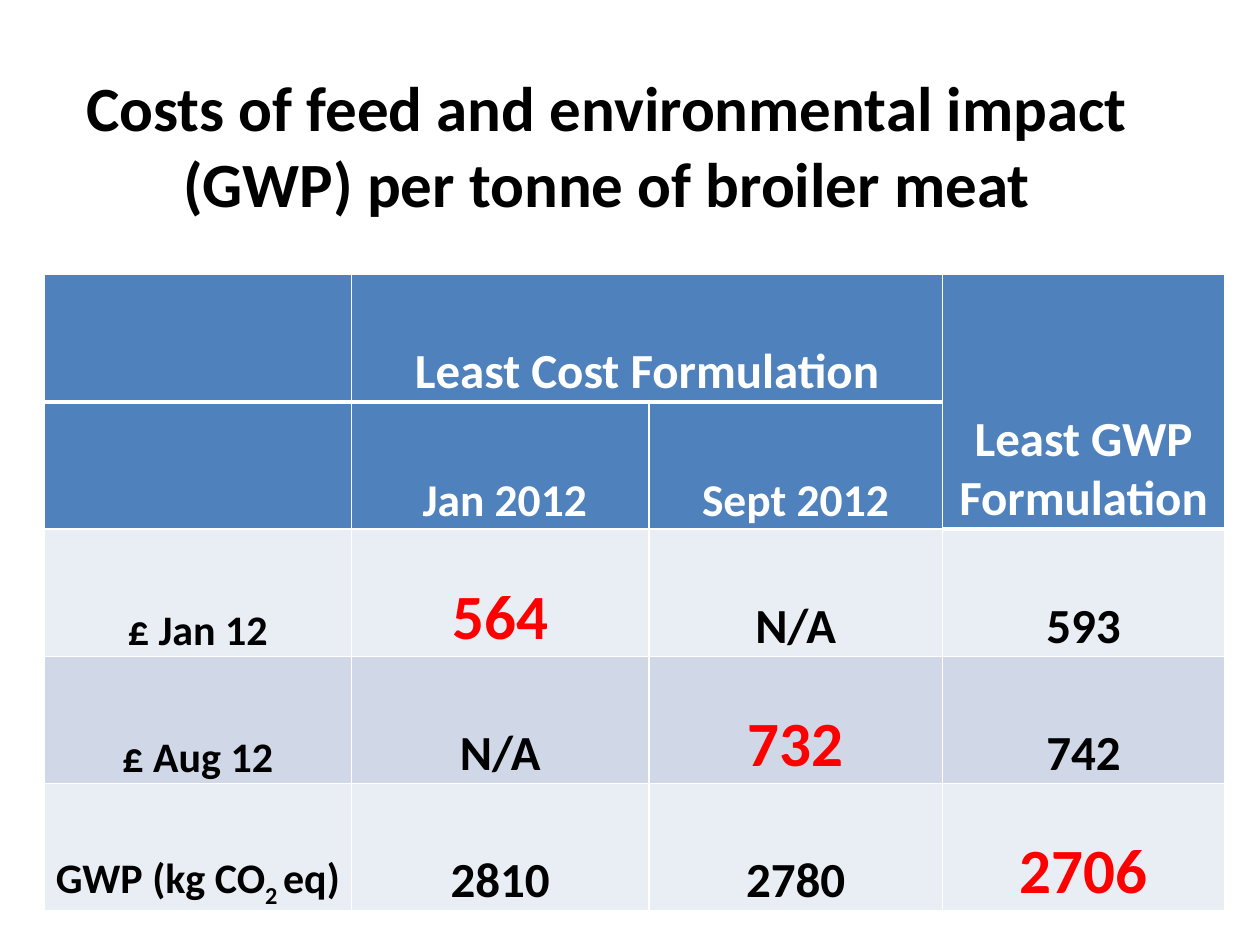
import pptx
import pptx.dml.color
import pptx.enum.text
import pptx.oxml
import pptx.oxml.ns
import pptx.util

Inches = pptx.util.Inches
Pt = pptx.util.Pt
ANCHOR = pptx.enum.text.MSO_ANCHOR

COLORS = {
    "text": "000000",
    "white": "FFFFFF",
    "accent": "FF0000",
    "header": "4F81BD",
    "light": "E9EDF4",
    "band": "D0D8E8",
}
COLUMN_WIDTHS = [2.44, 2.36, 2.33, 2.24]
ROW_HEIGHT = 1.01
ROW_FILLS = ["header", "header", "light", "band", "light"]
MERGES = [((0, 1), (0, 2)), ((0, 3), (1, 3))]
THICK_BOTTOMS = {(0, 0), (0, 1), (0, 2), (0, 3), (1, 3)}

HEAD = {"size": 28, "color": "white"}
SUBHEAD = {"size": 26, "color": "white"}
LABEL = {"size": 24, "color": "text"}
VALUE = {"size": 28, "color": "text"}
BEST = {"size": 36, "color": "accent"}

CELLS = {
    (0, 1): [("Least Cost Formulation", HEAD)],
    (0, 3): [("Least GWP Formulation", HEAD)],
    (1, 1): [(" ", {"size": 24, "color": "white"}), ("Jan 2012", SUBHEAD)],
    (1, 2): [("Sept 2012", SUBHEAD)],
    (2, 0): [("£ Jan 12", LABEL)],
    (2, 1): [("564", BEST)],
    (2, 2): [("N/A", VALUE)],
    (2, 3): [("593", VALUE)],
    (3, 0): [("£ Aug 12", LABEL)],
    (3, 1): [("N/A", VALUE)],
    (3, 2): [("732", BEST)],
    (3, 3): [("742", VALUE)],
    (4, 0): [("GWP (kg CO", LABEL), ("2 ", {**LABEL, "baseline": -25000}), ("eq)", LABEL)],
    (4, 1): [("2810", VALUE)],
    (4, 2): [("2780", VALUE)],
    (4, 3): [("2706", BEST)],
}


class SlideBuilder:
    def __init__(self, prs, font):
        self.s = prs.slides.add_slide(prs.slide_layouts[6])
        self.font = font

    def rgb(self, name):
        return pptx.dml.color.RGBColor.from_string(COLORS[name])

    def add_runs(self, tf, runs):
        p = tf.paragraphs[0]
        p.alignment = pptx.enum.text.PP_ALIGN.CENTER
        for text, style in runs:
            r = p.add_run()
            r.text = text
            values = {"name": self.font, "size": Pt(style["size"]), "bold": True}
            for key, value in values.items():
                setattr(r.font, key, value)
            r.font.color.rgb = self.rgb(style["color"])
            if "baseline" in style:
                r._r.get_or_add_rPr().set("baseline", str(style["baseline"]))

    def title(self, text, box):
        sp = self.s.shapes.add_textbox(*map(Inches, box))
        tf = sp.text_frame
        for key, value in {"word_wrap": True, "vertical_anchor": ANCHOR.MIDDLE}.items():
            setattr(tf, key, value)
        self.add_runs(tf, [(text, {"size": 36, "color": "text"})])

    def border(self, cell, edge, points):
        cell._tc.get_or_add_tcPr().append(pptx.oxml.parse_xml(
            f'<a:{edge} {pptx.oxml.ns.nsdecls("a")} w="{Pt(points)}">'
            f'<a:solidFill><a:srgbClr val="{COLORS["white"]}"/></a:solidFill></a:{edge}>'
        ))

    def table(self, left, top):
        rows, cols = len(ROW_FILLS), len(COLUMN_WIDTHS)
        frame = self.s.shapes.add_table(
            rows, cols, Inches(left), Inches(top),
            Inches(sum(COLUMN_WIDTHS)), Inches(ROW_HEIGHT * rows),
        )
        table = frame.table
        for column, width in zip(table.columns, COLUMN_WIDTHS):
            column.width = Inches(width)
        for row in table.rows:
            row.height = Inches(ROW_HEIGHT)
        for first, last in MERGES:
            table.cell(*first).merge(table.cell(*last))
        for row, fill in enumerate(ROW_FILLS):
            for col in range(cols):
                self.cell(table, row, col, fill)

    def cell(self, table, row, col, fill):
        cell = table.cell(row, col)
        values = {"vertical_anchor": ANCHOR.BOTTOM}
        for side in ("left", "right", "top", "bottom"):
            values[f"margin_{side}"] = 0
        for key, value in values.items():
            setattr(cell, key, value)
        top = 3 if (row - 1, col) in THICK_BOTTOMS else 1
        bottom = 3 if (row, col) in THICK_BOTTOMS else 1
        for edge, points in {"lnL": 1, "lnR": 1, "lnT": top, "lnB": bottom}.items():
            self.border(cell, edge, points)
        cell.fill.solid()
        cell.fill.fore_color.rgb = self.rgb(fill)
        if (row, col) in CELLS:
            self.add_runs(cell.text_frame, CELLS[row, col])


def main():
    prs = pptx.Presentation()
    prs.slide_width = Inches(10)
    prs.slide_height = Inches(7.5)
    slide = SlideBuilder(prs, "Calibri")
    slide.title(
        "Costs of feed and environmental impact (GWP) per tonne of broiler meat",
        (0.12, 0.52, 9.39, 1.25),
    )
    slide.table(0.35, 2.18)
    prs.save("out.pptx")


if __name__ == "__main__":
    main()
